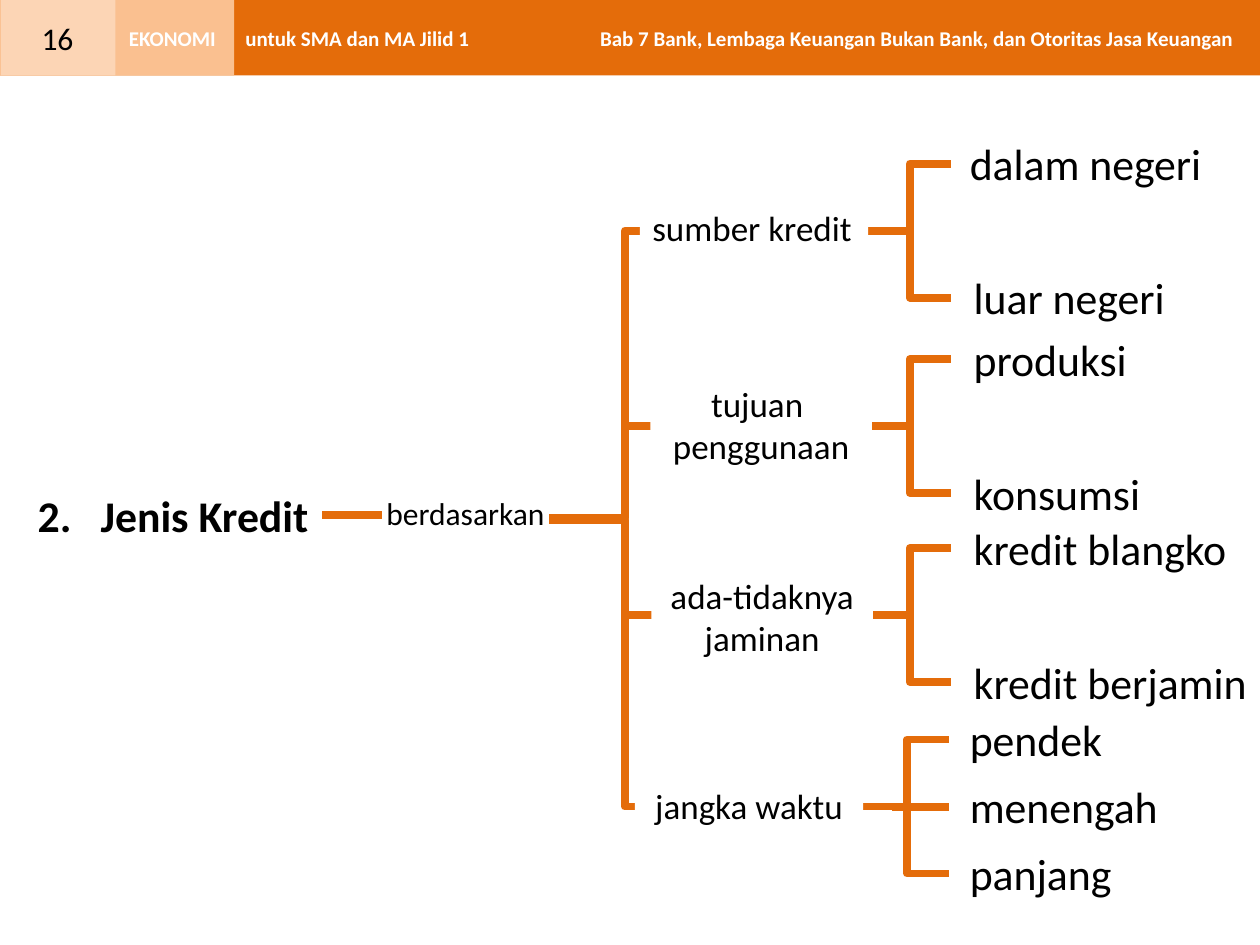
from lxml.etree import SubElement
from pptx import Presentation
from pptx.dml.color import RGBColor
from pptx.enum.shapes import MSO_CONNECTOR as Link, MSO_SHAPE as Shape
from pptx.enum.text import MSO_ANCHOR as Anchor, PP_ALIGN as Align
from pptx.oxml.ns import qn
from pptx.util import Cm, Pt

ORANGE, PEACH, CREAM = "E46C0A", "FAC090", "FCD5B5"
WHITE, BLACK = "FFFFFF", "000000"
HEADER_H = 1.52
LEAF_H, LEAF_GAP = 1.32, 1.35
SPINE_X = 12.6

# branch height, label box, label paragraphs, alignment, fork start, leaf (text, left, width)
BRANCHES = [
    (4.65, (12.9, 4.04, 4.6, 1.12), ["sumber kredit"], Align.LEFT, 17.5,
     [("dalam negeri", 19.3, 5.21), ("luar negeri", 19.38, 5.21)]),
    (8.59, (13.11, 7.59, 4.47, 1.96), ["tujuan ", "penggunaan"], Align.CENTER, 17.5,
     [("produksi", 19.38, 3.94), ("konsumsi", 19.38, 3.94)]),
    (12.4, (13.13, 11.46, 4.47, 1.96), ["ada-tidaknya jaminan"], Align.CENTER, 17.5,
     [("kredit blangko", 19.38, 6.02), ("kredit berjamin", 19.38, 6.32)]),
    (16.26, (12.8, 15.7, 4.6, 1.12), ["jangka waktu"], Align.CENTER, 17.45,
     [("pendek", 19.3, 3.61), ("menengah", 19.3, 4.8), ("panjang", 19.3, 4.19)]),
]


def rgb(color):
    return RGBColor.from_string(color)


def add_text(s, box, lines, size, color=BLACK, bold=False, align=Align.LEFT,
             anchor=Anchor.TOP, fill=None):
    sp = s.shapes.add_textbox(*map(Cm, box))
    if fill:
        sp.fill.solid()
        sp.fill.fore_color.rgb = rgb(fill)
    tf = sp.text_frame
    tf.word_wrap = True
    tf.vertical_anchor = anchor
    for i, line in enumerate(lines):
        p = tf.add_paragraph() if i else tf.paragraphs[0]
        p.alignment = align
        r = p.add_run()
        r.text = line
        for name, value in {"name": "Calibri", "size": Pt(size), "bold": bold}.items():
            setattr(r.font, name, value)
        r.font.color.rgb = rgb(color)
    return sp


def add_band(s, left, width, color):
    sp = s.shapes.add_shape(Shape.RECTANGLE, Cm(left), 0, Cm(width), Cm(HEADER_H))
    sp.shadow.inherit = False
    sp.fill.solid()
    sp.fill.fore_color.rgb = rgb(color)
    sp.line.fill.background()


def add_line(s, x1, y1, x2, y2, kind=Link.STRAIGHT, bend=None):
    """Orange connector; bend is the elbow's place as a share of the width."""
    c = s.shapes.add_connector(kind, Cm(x1), Cm(y1), Cm(x2), Cm(y2))
    c.line.color.rgb = rgb(ORANGE)
    c.line.width = Pt(4.5)
    props = c._element.spPr
    SubElement(props, qn("a:effectLst"))
    if bend:
        guides = props.find(qn("a:prstGeom")).get_or_add_avLst()
        SubElement(guides, qn("a:gd"), name="adj1", fmla=f"val {round(bend * 100000)}")


def number_paragraph(p, start, indent):
    props = p._p.get_or_add_pPr()
    props.set("marL", str(Cm(indent)))
    props.set("indent", str(-Cm(indent)))
    SubElement(props, qn("a:buAutoNum"), type="arabicPeriod", startAt=str(start))


def add_header(s):
    for left, width, color in [(0, 25.4, ORANGE), (0, 4.72, PEACH), (0.02, 2.31, CREAM)]:
        add_band(s, left, width, color)
    for left, width, text, align in [
        (4.6, 5.21, "untuk SMA dan MA Jilid 1", Align.CENTER),
        (11.71, 13.41, "Bab 7 Bank, Lembaga Keuangan Bukan Bank, dan Otoritas Jasa Keuangan",
         Align.RIGHT),
        (2.18, 2.59, "EKONOMI", Align.CENTER),
    ]:
        add_text(s, (left, 0.25, width, 1.02), [text], 12, WHITE, True, align, Anchor.MIDDLE)
    add_text(s, (0.46, 0.25, 1.4, 1.02), ["16"], 18, align=Align.CENTER)


def add_root(s):
    sp = add_text(s, (0.51, 9.73, 6.2, 1.32), ["Jenis Kredit"], 25, bold=True)
    number_paragraph(sp.text_frame.paragraphs[0], 2, 1.27)
    add_line(s, 6.5, 10.39, 7.7, 10.39)
    add_text(s, (7.54, 9.83, 3.81, 1.02), ["berdasarkan"], 18)


def add_trunk(s):
    ys = [branch[0] for branch in BRANCHES]
    for start_y, end_y in [(10.44, ys[0]), (10.49, ys[-1])]:
        add_line(s, 11.07, start_y, 17.86, end_y, Link.ELBOW, 0.225)
    for y in ys[1:-1]:
        add_line(s, SPINE_X, y, 17.91, y)


def add_branch(s, y, box, label, align, fork_x, leaves):
    step = 2 * LEAF_GAP / (len(leaves) - 1)
    end_x = fork_x + 1.68
    for i, (text, left, width) in enumerate(leaves):
        leaf_y = y - LEAF_GAP + i * step
        if abs(leaf_y - y) < 0.01:
            add_line(s, fork_x + 0.53, y, end_x, y)
        else:
            add_line(s, fork_x, y, end_x, leaf_y, Link.ELBOW, 0.5)
        add_text(s, (left, leaf_y - LEAF_H / 2, width, LEAF_H), [text], 25)
    add_text(s, box, label, 20, align=align, fill=WHITE)


def main():
    prs = Presentation()
    prs.slide_width, prs.slide_height = Cm(25.4), Cm(19.05)
    s = prs.slides.add_slide(prs.slide_layouts[6])
    add_header(s)
    add_root(s)
    add_trunk(s)
    for branch in BRANCHES:
        add_branch(s, *branch)
    prs.save("out.pptx")


if __name__ == "__main__":
    main()
